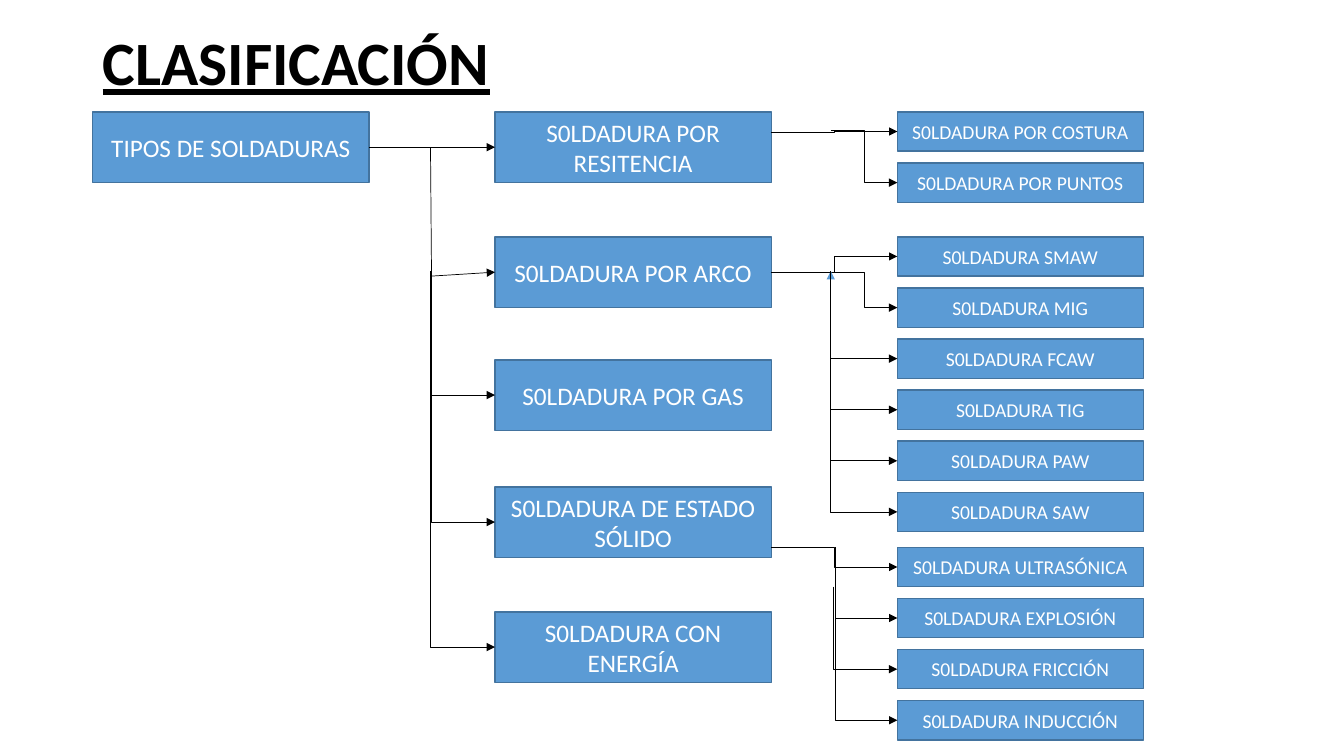
"""Build a one-slide tree diagram that classifies types of welding."""
import pptx
import pptx.dml.color
import pptx.enum.shapes
import pptx.enum.text
import pptx.oxml.ns
import pptx.util
from lxml import etree
from pptx.util import Inches

COLOURS = {"fill": "5B9BD5", "edge": "43739E", "text": "FFFFFF", "ink": "000000"}
FONT = "Calibri"
ROOT_LEFT, CATEGORY_LEFT, LEAF_LEFT = 0.92, 4.91, 8.9
TOP_ROW = 1.11
CATEGORY_SIZE, LEAF_SIZE = (2.74, 0.7), (2.44, 0.39)
LEAF_STEP = 1.52 / 3
CATEGORIES = [
    ("S0LDADURA POR RESITENCIA", TOP_ROW),
    ("S0LDADURA POR ARCO", 2.35),
    ("S0LDADURA POR GAS", 3.57),
    ("S0LDADURA DE ESTADO SÓLIDO", 4.83),
    ("S0LDADURA CON ENERGÍA", 6.07),
]
LEAF_GROUPS = [
    (TOP_ROW, ["POR COSTURA", "POR PUNTOS"]),
    (2.35, ["SMAW", "MIG", "FCAW", "TIG", "PAW", "SAW"]),
    (5.43, ["ULTRASÓNICA", "EXPLOSIÓN", "FRICCIÓN", "INDUCCIÓN"]),
]


def colour(name):
    """Return the named colour as an RGB value."""
    return pptx.dml.color.RGBColor.from_string(COLOURS[name])


def style_font(para, size, name):
    """Set the typeface, size and colour of a paragraph."""
    para.font.name = FONT
    para.font.size = pptx.util.Pt(size)
    para.font.color.rgb = colour(name)


def add_title(page, text):
    """Add the underlined slide title."""
    box = page.shapes.add_textbox(Inches(0.92), Inches(-0.07), Inches(11.5), Inches(1.45))
    frame = box.text_frame
    frame.word_wrap = True
    frame.vertical_anchor = pptx.enum.text.MSO_ANCHOR.MIDDLE
    para = frame.paragraphs[0]
    para.text = text
    para.line_spacing = 0.9
    style_font(para, 44, "ink")
    para.font.bold = True
    para.font.underline = True


def add_box(page, text, left, top, size, font_size):
    """Add a blue rectangle with centred text."""
    box = page.shapes.add_shape(
        pptx.enum.shapes.MSO_SHAPE.RECTANGLE,
        Inches(left), Inches(top), Inches(size[0]), Inches(size[1]))
    box.shadow.inherit = False
    box.fill.solid()
    box.fill.fore_color.rgb = colour("fill")
    box.line.color.rgb = colour("edge")
    box.line.width = pptx.util.Pt(1)
    frame = box.text_frame
    frame.word_wrap = True
    frame.vertical_anchor = pptx.enum.text.MSO_ANCHOR.MIDDLE
    para = frame.paragraphs[0]
    para.text = text
    para.alignment = pptx.enum.text.PP_ALIGN.CENTER
    style_font(para, font_size, "text")
    return box


def add_line(page, kind, start, end, ink="ink", arrow=True):
    """Add a thin connector between two points, with an arrowhead by default."""
    line = page.shapes.add_connector(kind, *start, *end)
    line.line.color.rgb = colour(ink)
    line.line.width = pptx.util.Pt(0.5)
    if arrow:
        outline = line.line._get_or_add_ln()
        etree.SubElement(outline, pptx.oxml.ns.qn("a:tailEnd"), type="triangle")
    etree.SubElement(line._element.spPr, pptx.oxml.ns.qn("a:effectLst"))
    return line


def add_straight(page, start, end, **options):
    """Add a straight connector between points given in inches."""
    kind = pptx.enum.shapes.MSO_CONNECTOR.STRAIGHT
    return add_line(page, kind, [Inches(n) for n in start], [Inches(n) for n in end], **options)


def left_middle(box):
    """Return the middle of a box's left side."""
    return box.left, box.top + box.height // 2


def add_step(page, start, box):
    """Add an arrow that runs across, turns halfway and enters a box."""
    add_line(page, pptx.enum.shapes.MSO_CONNECTOR.ELBOW,
             [Inches(n) for n in start], left_middle(box))


def add_drop(page, start, box):
    """Add an arrow that runs down and then across into a box."""
    left, top = (Inches(n) for n in start)
    right, bottom = left_middle(box)
    width, height = right - left, bottom - top
    frame_left = (left + right - height) // 2
    frame_top = (top + bottom - width) // 2
    line = add_line(page, pptx.enum.shapes.MSO_CONNECTOR.ELBOW,
                    (frame_left, frame_top), (frame_left + height, frame_top + width))
    properties = line._element.spPr
    properties.find(pptx.oxml.ns.qn("a:prstGeom")).set("prst", "bentConnector2")
    transform = properties.find(pptx.oxml.ns.qn("a:xfrm"))
    transform.set("rot", "16200000")
    transform.set("flipH", "1")


def add_leaves(page):
    """Add the right-hand boxes and return them by name."""
    return {
        name: add_box(page, f"S0LDADURA {name}", LEAF_LEFT, top + row * LEAF_STEP, LEAF_SIZE, 14)
        for top, names in LEAF_GROUPS
        for row, name in enumerate(names)
    }


def link_categories(page, root, categories):
    """Join the root box to the five categories."""
    resistance, arc, gas, solid, energy = categories
    main_line = add_straight(page, (3.66, 1.46), (CATEGORY_LEFT, 1.46))
    main_line.begin_connect(root, 3)
    main_line.end_connect(resistance, 1)
    add_straight(page, (4.27, 1.46), (4.28, 2.74), arrow=False)
    add_straight(page, (4.27, 2.74), (CATEGORY_LEFT, 2.7)).end_connect(arc, 1)
    for start, box in [((4.28, 2.69), gas), ((4.28, 2.68), solid), ((4.27, 2.69), energy)]:
        add_drop(page, start, box)


def link_leaves(page, leaves):
    """Join the categories to their right-hand boxes."""
    steps = [
        (7.65, 1.31, "POR COSTURA"), (8.24, 1.29, "POR PUNTOS"),
        (7.65, 2.7, "SMAW"), (8.24, 2.7, "MIG"), (7.65, 5.43, "ULTRASÓNICA"),
    ]
    drops = [
        (8.24, 2.7, "FCAW"), (8.24, 2.74, "TIG"), (8.24, 2.7, "PAW"), (8.24, 2.69, "SAW"),
        (8.28, 5.43, "EXPLOSIÓN"), (8.27, 5.82, "FRICCIÓN"), (8.28, 5.82, "INDUCCIÓN"),
    ]
    for left, top, name in steps:
        add_step(page, (left, top), leaves[name])
    add_straight(page, (8.24, 2.7), (8.24, 2.69), ink="fill")
    for left, top, name in drops:
        add_drop(page, (left, top), leaves[name])


def main():
    """Build and save the deck."""
    deck = pptx.Presentation()
    deck.slide_width = Inches(13.33)
    deck.slide_height = Inches(7.5)
    page = deck.slides.add_slide(deck.slide_layouts[6])
    add_title(page, "CLASIFICACIÓN")
    root = add_box(page, "TIPOS DE SOLDADURAS", ROOT_LEFT, TOP_ROW, CATEGORY_SIZE, 18)
    categories = [add_box(page, text, CATEGORY_LEFT, top, CATEGORY_SIZE, 18)
                  for text, top in CATEGORIES]
    leaves = add_leaves(page)
    link_categories(page, root, categories)
    link_leaves(page, leaves)
    deck.save("out.pptx")


if __name__ == "__main__":
    main()
